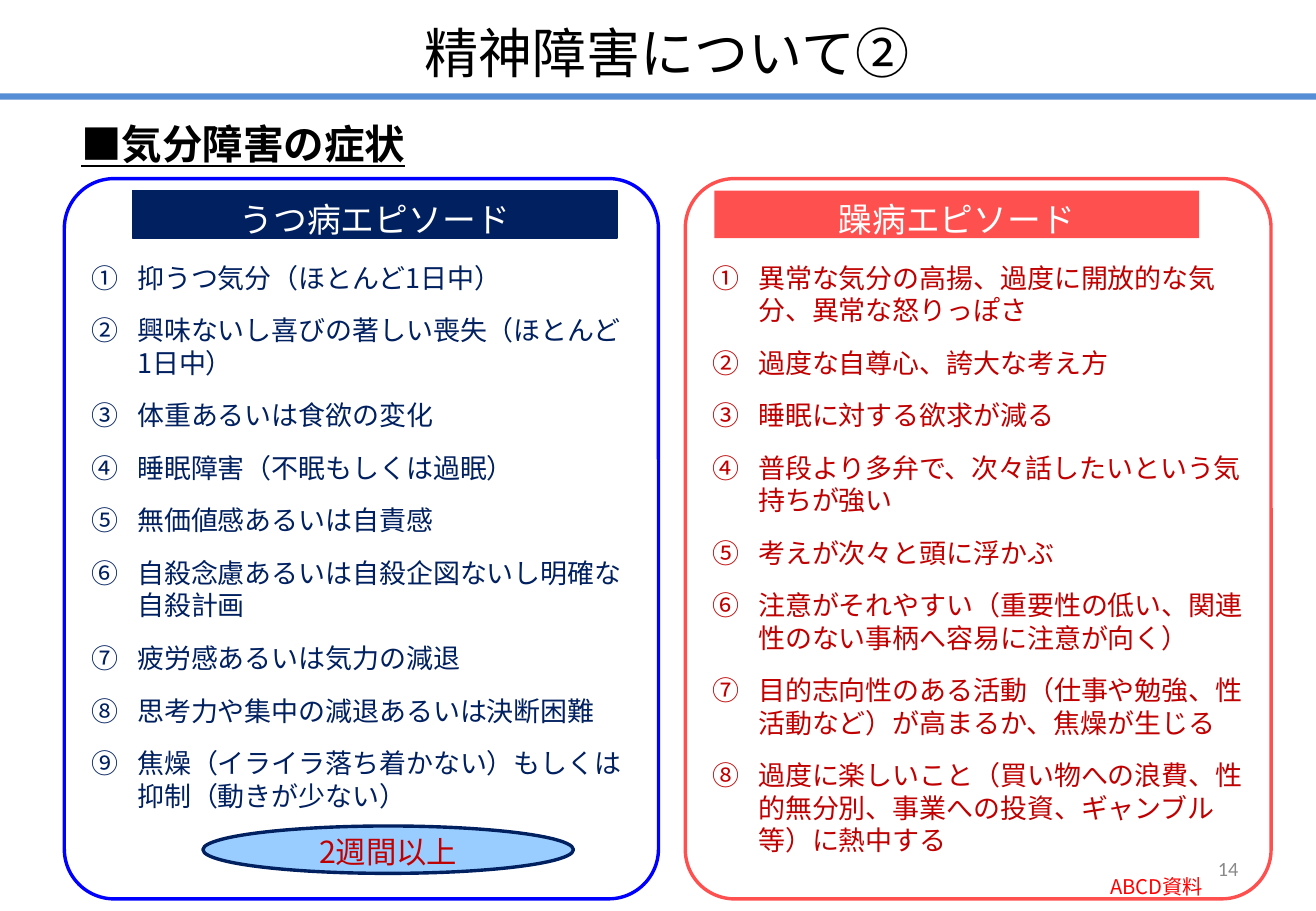
from dataclasses import dataclass
from typing import NamedTuple

from lxml.etree import SubElement
from pptx import Presentation
from pptx.dml.color import RGBColor
from pptx.enum.shapes import MSO_SHAPE as Preset
from pptx.enum.text import MSO_ANCHOR as Anchor, MSO_AUTO_SIZE as AutoSize, PP_ALIGN as Align
from pptx.oxml.ns import qn
from pptx.util import Inches, Pt

SLIDE_W, SLIDE_H = Inches(10.83), Inches(7.5)


@dataclass(frozen=True)
class Theme:
    cjk: str = "Noto Sans CJK JP"
    title_font: str = "Arial"
    latin: str = "Calibri"
    black: str = "000000"
    white: str = "FFFFFF"
    navy: str = "002060"
    blue: str = "0000FF"
    coral: str = "FF5050"
    crimson: str = "C00000"
    red: str = "FF0000"
    sky: str = "99CCFF"
    rule: str = "558ED5"
    grey: str = "898989"
    title: int = 32
    heading: int = 24
    banner: int = 20
    duration: int = 18
    item: int = 16
    small: int = 12
    leading: float = 1.2


THEME = Theme()


class Box(NamedTuple):
    """Left, top, width and height in percent of the slide."""
    x: float
    y: float
    w: float
    h: float

    def emu(self) -> tuple[int, int, int, int]:
        return (round(SLIDE_W * self.x / 100), round(SLIDE_H * self.y / 100),
                round(SLIDE_W * self.w / 100), round(SLIDE_H * self.h / 100))


@dataclass(frozen=True)
class Episode:
    name: str
    panel: Box
    banner: Box
    outline: str
    banner_fill: str
    banner_line: str | None
    ink: str
    symptoms: tuple[str, ...]


EPISODES = (
    Episode(
        "うつ病エピソード", Box(4.89, 19.6, 45.15, 79.07), Box(10.06, 20.93, 36.84, 5.2),
        THEME.blue, THEME.navy, THEME.navy, THEME.navy,
        ("抑うつ気分（ほとんど1日中）",
         "興味ないし喜びの著しい喪失（ほとんど1日中）",
         "体重あるいは食欲の変化",
         "睡眠障害（不眠もしくは過眠）",
         "無価値感あるいは自責感",
         "自殺念慮あるいは自殺企図ないし明確な自殺計画",
         "疲労感あるいは気力の減退",
         "思考力や集中の減退あるいは決断困難",
         "焦燥（イライラ落ち着かない）もしくは抑制（動きが少ない）")),
    Episode(
        "躁病エピソード", Box(52.08, 19.6, 44.51, 79.07), Box(54.29, 20.93, 36.84, 5.2),
        THEME.coral, THEME.coral, None, THEME.crimson,
        ("異常な気分の高揚、過度に開放的な気分、異常な怒りっぽさ",
         "過度な自尊心、誇大な考え方",
         "睡眠に対する欲求が減る",
         "普段より多弁で、次々話したいという気持ちが強い",
         "考えが次々と頭に浮かぶ",
         "注意がそれやすい（重要性の低い、関連性のない事柄へ容易に注意が向く）",
         "目的志向性のある活動（仕事や勉強、性活動など）が高まるか、焦燥が生じる",
         "過度に楽しいこと（買い物への浪費、性的無分別、事業への投資、ギャンブル等）に熱中する")),
)


def write(shape, *lines: str, size: int, color: str, font: str = THEME.cjk,
          align=Align.LEFT, anchor=Anchor.TOP, bold: bool = False, underline: bool = False,
          after: float = 0, insets=(0.1, 0.07, 0.1, 0.05)) -> None:
    """Fill a shape with one formatted paragraph per line."""
    frame = shape.text_frame
    frame.word_wrap = True
    frame.auto_size = AutoSize.NONE
    frame.vertical_anchor = anchor
    (frame.margin_left, frame.margin_top,
     frame.margin_right, frame.margin_bottom) = map(Inches, insets)
    for index, line in enumerate(lines):
        paragraph = frame.add_paragraph() if index else frame.paragraphs[0]
        paragraph.alignment = align
        paragraph.line_spacing = Pt(size * THEME.leading)
        paragraph.space_before, paragraph.space_after = Pt(0), Pt(after)
        run = paragraph.add_run()
        run.text = line
        run.font.size, run.font.name = Pt(size), font
        run.font.bold, run.font.underline = bold, underline
        run.font.color.rgb = RGBColor.from_string(color)
        east_asian = SubElement(run.font._element, qn("a:ea"), typeface=THEME.cjk)
        run.font._element.find(qn("a:latin")).addnext(east_asian)


def number_items(shape) -> None:
    """Give each paragraph a circled number with a hanging indent."""
    indent = Inches(0.38)
    for paragraph in shape.text_frame.paragraphs:
        props = paragraph._p.get_or_add_pPr()
        props.set("marL", str(indent))
        props.set("indent", str(-indent))
        props.set("hangingPunct", "0")
        SubElement(props, qn("a:buFont"), typeface=THEME.cjk)
        SubElement(props, qn("a:buAutoNum"), type="circleNumDbPlain")


def add_block(slide, preset, box: Box, fill: str, line: str | None = None, width: float = 2):
    block = slide.shapes.add_shape(preset, *box.emu())
    block.shadow.inherit = False
    block.fill.solid()
    block.fill.fore_color.rgb = RGBColor.from_string(fill)
    if line:
        block.line.color.rgb = RGBColor.from_string(line)
        block.line.width = Pt(width)
    else:
        block.line.fill.background()
    return block


def place(shape, box: Box) -> None:
    shape.left, shape.top, shape.width, shape.height = box.emu()


def add_episode(slide, episode: Episode, symptoms) -> None:
    # Rounded panel, with the list placeholder brought in front of it
    panel = add_block(slide, Preset.ROUNDED_RECTANGLE, episode.panel, THEME.white, episode.outline)
    panel.adjustments[0] = 0.084
    place(symptoms, episode.panel)
    slide.shapes.element.append(symptoms.element)
    write(symptoms, *episode.symptoms, size=THEME.item, color=episode.ink,
          after=12, insets=(0.22, 0.68, 0.2, 0.05))
    number_items(symptoms)
    # Name banner
    banner = add_block(slide, Preset.RECTANGLE, episode.banner,
                       episode.banner_fill, episode.banner_line, 0.75)
    write(banner, episode.name, size=THEME.banner, color=THEME.white, align=Align.CENTER)


def main() -> None:
    deck = Presentation()
    deck.slide_width, deck.slide_height = SLIDE_W, SLIDE_H
    slide = deck.slides.add_slide(deck.slide_layouts[3])
    title, *symptom_lists = slide.placeholders

    # Title, rule and heading
    place(title, Box(1.57, 1.2, 98.25, 9.73))
    write(title, "精神障害について②", size=THEME.title, color=THEME.black,
          font=THEME.title_font, align=Align.CENTER)
    add_block(slide, Preset.RECTANGLE, Box(-0.92, 10.27, 101.39, 0.67), THEME.rule)
    heading = slide.shapes.add_textbox(*Box(5.26, 12.13, 41.18, 6.67).emu())
    write(heading, "■気分障害の症状", size=THEME.heading, color=THEME.black,
          font=THEME.latin, bold=True, underline=True)

    # Episodes side by side
    for episode, symptoms in zip(EPISODES, symptom_lists):
        add_episode(slide, episode, symptoms)

    # Minimum duration
    duration = add_block(slide, Preset.OVAL, Box(15.42, 90.67, 28.16, 5.2), THEME.sky, THEME.navy)
    write(duration, "2週間以上", size=THEME.duration, color=THEME.crimson,
          align=Align.CENTER, anchor=Anchor.MIDDLE)

    # Page number and credit
    for text, box, font, color in (
        ("14", Box(71.65, 92.67, 23.36, 5.33), THEME.latin, THEME.grey),
        ("ABCD資料", Box(63.07, 94.67, 29.27, 5.33), THEME.cjk, THEME.red),
    ):
        footer = slide.shapes.add_textbox(*box.emu())
        write(footer, text, size=THEME.small, color=color, font=font,
              align=Align.RIGHT, anchor=Anchor.MIDDLE, insets=(0.1, 0.05, 0.1, 0.05))

    deck.save("out.pptx")


if __name__ == "__main__":
    main()
